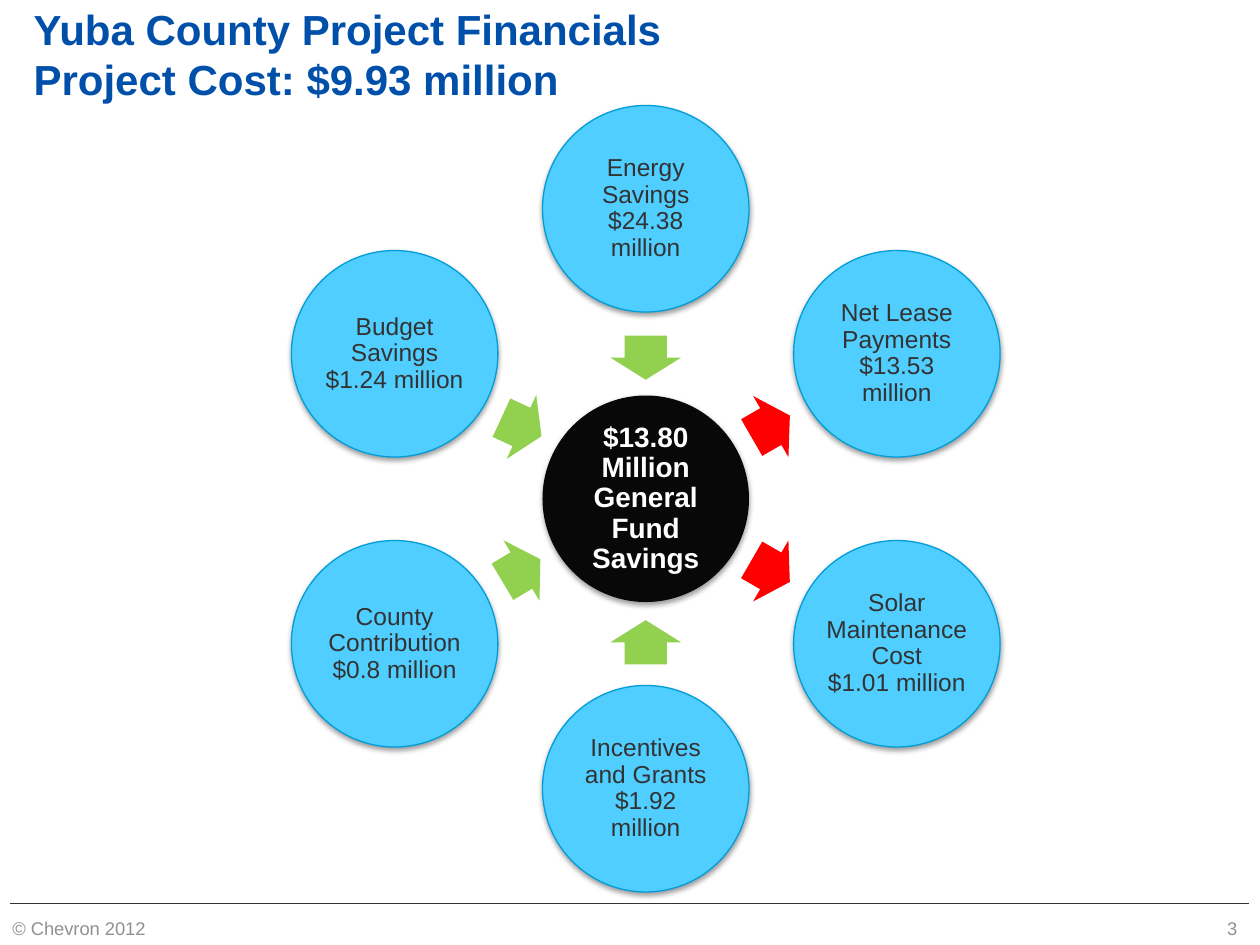
import math
import pptx
import pptx.util
import pptx.oxml
import pptx.oxml.ns
import pptx.dml.color
import pptx.enum.shapes
import pptx.enum.text

Pt = pptx.util.Pt
SHAPE = pptx.enum.shapes.MSO_SHAPE
ALIGN = pptx.enum.text.PP_ALIGN
MIDDLE = pptx.enum.text.MSO_ANCHOR.MIDDLE
COLORS = {
    "title": "0050AA", "ink": "333333", "foot": "909090", "white": "FFFFFF",
    "hub": "080808", "disc": "4FCEFF", "rim": "009DD9",
    "gain": "92D050", "cost": "FF0000",
}
SPOKES = [
    (-90, "Energy Savings\v$24.38 million", "gain", 90, 80.6),
    (-30, "Net Lease Payments\v$13.53 million", "cost", 330, 82.5),
    (30, "Solar Maintenance Cost\v$1.01 million", "cost", 30, 82.5),
    (90, "Incentives and Grants\v$1.92\vmillion", "gain", 270, 82),
    (150, "County Contribution\n$0.8 million", "gain", 329.2, 82),
    (210, "Budget Savings $1.24 million", "gain", 24.8, 82),
]


def tint(name):
    """Return the named colour."""
    return pptx.dml.color.RGBColor.from_string(COLORS[name])


def shade(shape, alpha, blur, dist, angle):
    """Give a shape or connector a soft outer shadow."""
    shape._element.spPr.append(pptx.oxml.parse_xml(
        f'<a:effectLst {pptx.oxml.ns.nsdecls("a")}>'
        f'<a:outerShdw blurRad="{Pt(blur)}" dist="{Pt(dist)}" '
        f'dir="{angle * 60000}" rotWithShape="0"><a:srgbClr val="000000">'
        f'<a:alpha val="{alpha * 1000}"/></a:srgbClr></a:outerShdw></a:effectLst>'))


def write(frame, text, size, color, bold=False, align=ALIGN.LEFT, space=None):
    """Fill a text frame and format its runs."""
    frame.text = text
    frame.vertical_anchor = MIDDLE
    for para in frame.paragraphs:
        para.alignment = align
        para.line_spacing = space
        for run in para.runs:
            font = run.font
            font.name, font.size, font.bold = "Arial", Pt(size), bold
            font.color.rgb = tint(color)


def add_title(slide, left, top, width, height):
    """Place the two-line title."""
    title = slide.shapes.title
    title.left, title.top = Pt(left), Pt(top)
    title.width, title.height = Pt(width), Pt(height)
    frame = title.text_frame
    write(frame, "Yuba County Project Financials\vProject Cost: $9.93 million",
          24, "title", True)
    frame.auto_size = pptx.enum.text.MSO_AUTO_SIZE.NONE
    frame.word_wrap = False


def add_disc(slide, x, y, size, text, fill, rim=None):
    """Draw a labelled circle centred on a point."""
    disc = slide.shapes.add_shape(
        SHAPE.OVAL, Pt(x - size / 2), Pt(y - size / 2), Pt(size), Pt(size))
    disc.fill.solid()
    disc.fill.fore_color.rgb = tint(fill)
    if rim:
        disc.line.color.rgb = tint(rim)
        disc.line.width = Pt(0.75)
    else:
        disc.line.fill.background()
    shade(disc, 38, 3.1, 1.6, 90)
    frame = disc.text_frame
    frame.margin_left = frame.margin_right = Pt(1.4)
    frame.margin_top = frame.margin_bottom = Pt(1.4)
    frame.word_wrap = True
    write(frame, text, 14 if rim else 16, "ink" if rim else "white",
          not rim, ALIGN.CENTER, 0.9)


def add_arrow(slide, x, y, turn, color):
    """Draw a block arrow centred on a point."""
    wide, high = 25.2, 40.3
    arrow = slide.shapes.add_shape(
        SHAPE.RIGHT_ARROW, Pt(x - wide / 2), Pt(y - high / 2), Pt(wide), Pt(high))
    arrow.adjustments[0], arrow.adjustments[1] = 0.6, 0.5
    arrow.rotation = turn
    arrow.fill.solid()
    arrow.fill.fore_color.rgb = tint(color)
    arrow.line.fill.background()
    arrow.shadow.inherit = False


def add_wheel(slide, left, top, width, height):
    """Draw the hub with its ring of discs and arrows."""
    x, y = left + width / 2, top + height / 2
    size = 118
    ring = (height - size) / 2
    add_disc(slide, x, y, size, "$13.80 Million General Fund Savings", "hub")
    for angle, text, color, turn, reach in SPOKES:
        cos, sin = math.cos(math.radians(angle)), math.sin(math.radians(angle))
        add_arrow(slide, x + reach * cos, y + reach * sin, turn, color)
        add_disc(slide, x + ring * cos, y + ring * sin, size, text, "disc", "rim")


def add_foot(slide, left, top, width, height):
    """Place the rule, copyright line and page number."""
    rule = slide.shapes.add_connector(
        pptx.enum.shapes.MSO_CONNECTOR.STRAIGHT,
        Pt(left + 6), Pt(top), Pt(left + width - 6), Pt(top))
    rule.line.color.rgb = tint("ink")
    rule.line.width = Pt(0.75)
    shade(rule, 40, 4, 3, 45)
    for x, wide, text, align in (
            (left, 240, "© Chevron 2012", ALIGN.LEFT),
            (left + width - 174, 168, "3", ALIGN.RIGHT)):
        box = slide.shapes.add_textbox(Pt(x), Pt(top), Pt(wide), Pt(height))
        box.text_frame.word_wrap = True
        write(box.text_frame, text, 10.5, "foot", align=align)


def main():
    """Build and save the slide."""
    deck = pptx.Presentation()
    deck.slide_width, deck.slide_height = Pt(720), Pt(540)
    slide = deck.slides.add_slide(deck.slide_layouts[5])
    add_foot(slide, 0, 516.2, 720, 28.8)
    add_title(slide, 12, 7.2, 600, 46.8)
    add_wheel(slide, 166, 60.3, 406, 449.4)
    deck.save("out.pptx")


if __name__ == "__main__":
    main()
